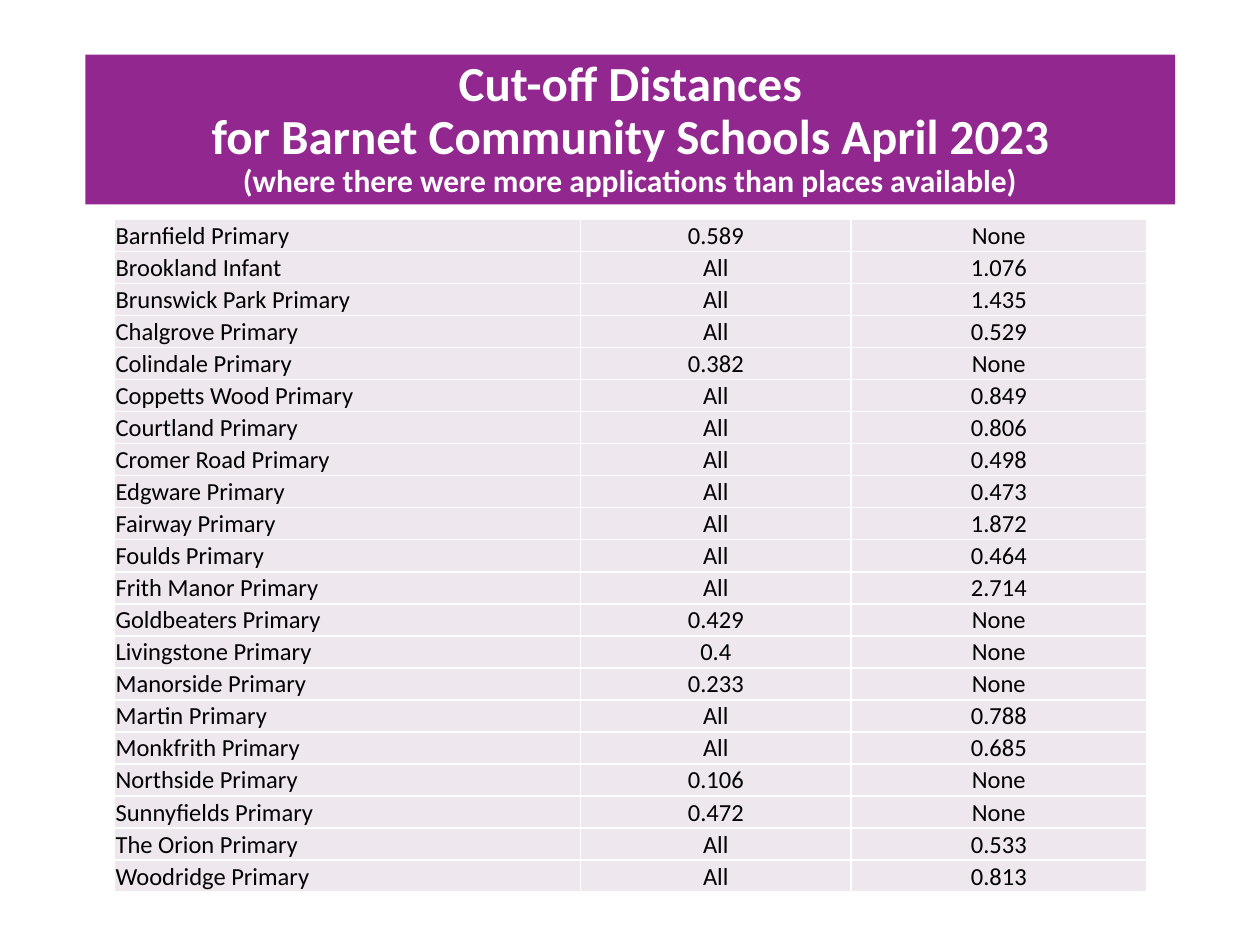
from lxml import etree
from pptx import Presentation
from pptx.dml.color import RGBColor
from pptx.enum.shapes import MSO_SHAPE
from pptx.enum.text import MSO_ANCHOR, PP_ALIGN
from pptx.oxml.ns import qn
from pptx.util import Cm, Pt

RECT = MSO_SHAPE.RECTANGLE
MIDDLE, BOTTOM = MSO_ANCHOR.MIDDLE, MSO_ANCHOR.BOTTOM
LEFT, CENTER = PP_ALIGN.LEFT, PP_ALIGN.CENTER

FONT = "Calibri"
PURPLE, PALE, WHITE, BLACK = "92278F", "EEE8EE", "FFFFFF", "000000"

TITLE = [
    ("Cut-off Distances", 28),
    ("for Barnet Community Schools April 2023", 28),
    ("(where there were more applications than places available)", 18),
]
SCHOOLS = [
    ("Barnfield Primary", "0.589", "None"),
    ("Brookland Infant", "All", "1.076"),
    ("Brunswick Park Primary", "All", "1.435"),
    ("Chalgrove Primary", "All", "0.529"),
    ("Colindale Primary", "0.382", "None"),
    ("Coppetts Wood Primary", "All", "0.849"),
    ("Courtland Primary", "All", "0.806"),
    ("Cromer Road Primary", "All", "0.498"),
    ("Edgware Primary", "All", "0.473"),
    ("Fairway Primary", "All", "1.872"),
    ("Foulds Primary", "All", "0.464"),
    ("Frith Manor Primary", "All", "2.714"),
    ("Goldbeaters Primary", "0.429", "None"),
    ("Livingstone Primary", "0.4", "None"),
    ("Manorside Primary", "0.233", "None"),
    ("Martin Primary", "All", "0.788"),
    ("Monkfrith Primary", "All", "0.685"),
    ("Northside Primary", "0.106", "None"),
    ("Sunnyfields Primary", "0.472", "None"),
    ("The Orion Primary", "All", "0.533"),
    ("Woodridge Primary", "All", "0.813"),
]
COLUMNS = [(9.39, LEFT), (5.46, CENTER), (5.95, CENTER)]


def rgb(value):
    return RGBColor.from_string(value)


def add_text(p, text, size, color, align, bold=False):
    p.alignment = align
    r = p.add_run()
    r.text = text
    r.font.name, r.font.size, r.font.bold = FONT, Pt(size), bold
    r.font.color.rgb = rgb(color)


prs = Presentation()
prs.slide_width, prs.slide_height = Cm(25.4), Cm(19.05)
s = prs.slides.add_slide(prs.slide_layouts[6])

# Title banner
sp = s.shapes.add_shape(RECT, Cm(1.72), Cm(1.1), Cm(21.97), Cm(3.02))
sp.shadow.inherit = False
sp.fill.solid()
sp.fill.fore_color.rgb = rgb(PURPLE)
sp.line.fill.background()
tf = sp.text_frame
tf.word_wrap = True
tf.vertical_anchor = MIDDLE
tf.margin_top = tf.margin_bottom = 0
for i, (text, size) in enumerate(TITLE):
    p = tf.add_paragraph() if i else tf.paragraphs[0]
    p.line_spacing = 0.9
    add_text(p, text, size, WHITE, CENTER, bold=True)

# Distance table
width = sum(w for w, _ in COLUMNS)
table = s.shapes.add_table(len(SCHOOLS), len(COLUMNS), Cm(2.31), Cm(4.42),
                           Cm(width), Cm(13.57)).table
table.first_row = table.horz_banding = False
for column, (w, _) in zip(table.columns, COLUMNS):
    column.width = Cm(w)

for i, row in enumerate(SCHOOLS):
    for j, text in enumerate(row):
        cell = table.cell(i, j)
        cell.margin_left = cell.margin_right = cell.margin_top = Cm(0.02)
        cell.margin_bottom = 0
        cell.vertical_anchor = BOTTOM if (i, j) == (0, 1) else MIDDLE
        add_text(cell.text_frame.paragraphs[0], text, 14, BLACK, COLUMNS[j][1])

        # White borders come before the fill in the cell properties
        tc_pr = cell._tc.get_or_add_tcPr()
        for side in ("a:lnL", "a:lnR", "a:lnT", "a:lnB"):
            ln = etree.SubElement(tc_pr, qn(side), w=str(Pt(1)))
            fill = etree.SubElement(ln, qn("a:solidFill"))
            etree.SubElement(fill, qn("a:srgbClr"), val=WHITE)
        cell.fill.solid()
        cell.fill.fore_color.rgb = rgb(PALE)

prs.save("out.pptx")
